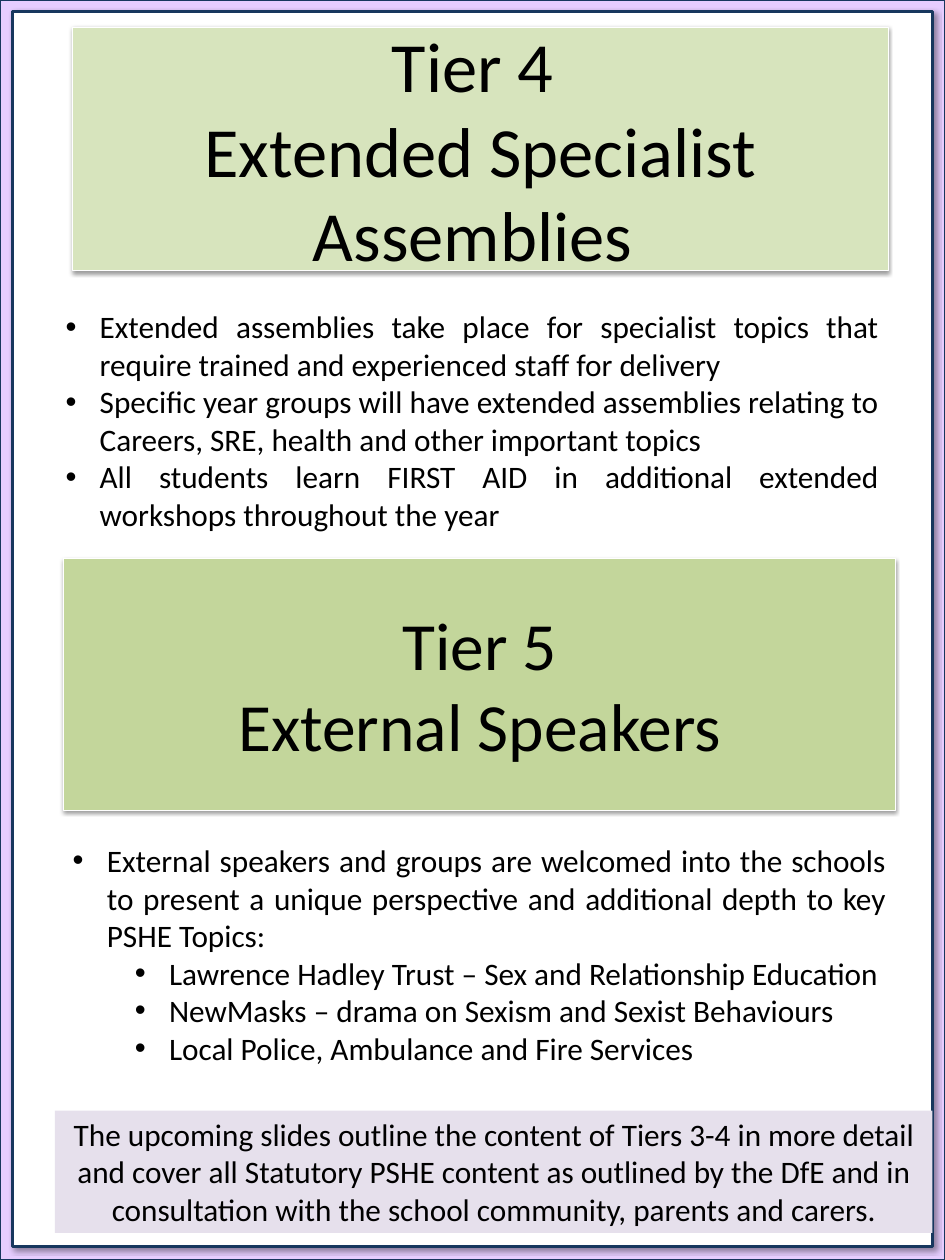
from dataclasses import dataclass
from typing import Optional

import pptx
import pptx.dml.color
import pptx.enum.shapes
import pptx.enum.text
import pptx.oxml.ns
import pptx.util
from lxml import etree

Align = pptx.enum.text.PP_ALIGN
Anchor = pptx.enum.text.MSO_ANCHOR
Inches = pptx.util.Inches
Pt = pptx.util.Pt

FONT = "Calibri"
BODY_SIZE = 25
HANGING = 0.38
LEVEL_INDENTS = (0.38, 1.07)
COLORS = {
    "lilac": "E6CDFF",
    "navy": "17375E",
    "white": "FFFFFF",
    "black": "000000",
    "tier4": "D7E4BD",
    "tier5": "C3D69B",
    "note": "E6E0EC",
}


@dataclass
class Shadow:
    opacity: int
    blur: float
    distance: float
    angle: int


@dataclass
class Box:
    left: float
    top: float
    width: float
    height: float
    fill: str
    line: Optional[str] = None
    line_width: float = 0.75
    shadow: Optional[Shadow] = None


@dataclass
class Item:
    text: str
    level: int = 0


FRAME_SHADOW = Shadow(40, 4, 3, 45)
BANNER_SHADOW = Shadow(38, 3.1, 1.6, 90)

PAGE_BORDER = Box(0, -0.01, 10.5, 14.01, "lilac", "navy", 2.25)
PAGE_PANEL = Box(0.14, 0.13, 10.22, 13.72, "white", "navy", 2.25, FRAME_SHADOW)
TIER4_BANNER = Box(0.81, 0.3, 9.06, 2.71, "tier4", "white", shadow=BANNER_SHADOW)
TIER4_BODY = Box(0.63, 3.37, 9.23, 3.05, "white")
TIER5_BANNER = Box(0.71, 6.21, 9.24, 2.79, "tier5", "white", shadow=BANNER_SHADOW)
TIER5_BODY = Box(0.71, 9.3, 9.23, 3.05, "white")
NOTE = Box(0.61, 12.34, 9.75, 1.36, "note")

TIER4_ITEMS = [
    Item("Extended assemblies take place for specialist topics that require trained "
         "and experienced staff for delivery"),
    Item("Specific year groups will have extended assemblies relating to Careers, SRE, "
         "health and other important topics"),
    Item("All students learn FIRST AID in additional extended workshops throughout the year"),
]
TIER5_ITEMS = [
    Item("External speakers and groups are welcomed into the schools to present a unique "
         "perspective and additional depth to key PSHE Topics:"),
    Item("Lawrence Hadley Trust – Sex and Relationship Education", 1),
    Item("NewMasks – drama on Sexism and Sexist Behaviours", 1),
    Item("Local Police, Ambulance and Fire Services", 1),
]
NOTE_TEXT = ("The upcoming slides outline the content of Tiers 3-4 in more detail and cover "
             "all Statutory PSHE content as outlined by the DfE and in consultation with "
             "the school community, parents and carers.")


def color(name: str) -> pptx.dml.color.RGBColor:
    return pptx.dml.color.RGBColor.from_string(COLORS[name])


def add_child(parent, tag: str, **attributes):
    values = {key: str(value) for key, value in attributes.items()}
    return etree.SubElement(parent, pptx.oxml.ns.qn(tag), values)


def cast_shadow(shape, shadow: Shadow) -> None:
    effects = shape._element.spPr.find(pptx.oxml.ns.qn("a:effectLst"))
    outer = add_child(effects, "a:outerShdw", blurRad=int(Pt(shadow.blur)),
                      dist=int(Pt(shadow.distance)), dir=shadow.angle * 60000,
                      algn="ctr", rotWithShape=0)
    tint = add_child(outer, "a:srgbClr", val=COLORS["black"])
    add_child(tint, "a:alpha", val=shadow.opacity * 1000)


def style_box(shape, box: Box) -> None:
    shape.left, shape.top = Inches(box.left), Inches(box.top)
    shape.width, shape.height = Inches(box.width), Inches(box.height)
    shape.fill.solid()
    shape.fill.fore_color.rgb = color(box.fill)
    if box.line:
        shape.line.color.rgb = color(box.line)
        shape.line.width = Pt(box.line_width)
    else:
        shape.line.fill.background()
    shape.shadow.inherit = False
    if box.shadow:
        cast_shadow(shape, box.shadow)


def add_box(slide, box: Box):
    shape = slide.shapes.add_shape(pptx.enum.shapes.MSO_SHAPE.RECTANGLE, 0, 0, 0, 0)
    style_box(shape, box)
    return shape


def write(shape, text: str, size: float, align: Align, anchor: Anchor) -> None:
    frame = shape.text_frame
    frame.text = text
    frame.word_wrap = True
    frame.auto_size = pptx.enum.text.MSO_AUTO_SIZE.NONE
    frame.vertical_anchor = anchor
    for paragraph in frame.paragraphs:
        paragraph.alignment = align
        for run in paragraph.runs:
            run.font.name = FONT
            run.font.size = Pt(size)
            run.font.color.rgb = color("black")


def add_bullets(slide, box: Box, items: list[Item]) -> None:
    body = add_box(slide, box)
    write(body, "\n".join(item.text for item in items), BODY_SIZE, Align.JUSTIFY, Anchor.TOP)
    for paragraph, item in zip(body.text_frame.paragraphs, items):
        paragraph.level = item.level
        properties = paragraph._p.get_or_add_pPr()
        properties.set("marL", str(int(Inches(LEVEL_INDENTS[item.level]))))
        properties.set("indent", str(int(Inches(-HANGING))))
        add_child(properties, "a:buFont", typeface="Arial")
        add_child(properties, "a:buChar", char="•")


def main() -> None:
    deck = pptx.Presentation()
    deck.slide_width, deck.slide_height = Inches(10.5), Inches(14)
    slide = deck.slides.add_slide(deck.slide_layouts[5])

    add_box(slide, PAGE_BORDER)
    add_box(slide, PAGE_PANEL)

    tier4 = slide.shapes.title
    tier4._element.getparent().append(tier4._element)
    style_box(tier4, TIER4_BANNER)
    write(tier4, "Tier 4 \nExtended Specialist Assemblies ", 56.4, Align.CENTER, Anchor.MIDDLE)
    add_bullets(slide, TIER4_BODY, TIER4_ITEMS)

    tier5 = add_box(slide, TIER5_BANNER)
    write(tier5, "Tier 5\nExternal Speakers", 54, Align.CENTER, Anchor.MIDDLE)
    add_bullets(slide, TIER5_BODY, TIER5_ITEMS)

    write(add_box(slide, NOTE), NOTE_TEXT, BODY_SIZE, Align.CENTER, Anchor.TOP)

    deck.save("out.pptx")


if __name__ == "__main__":
    main()
